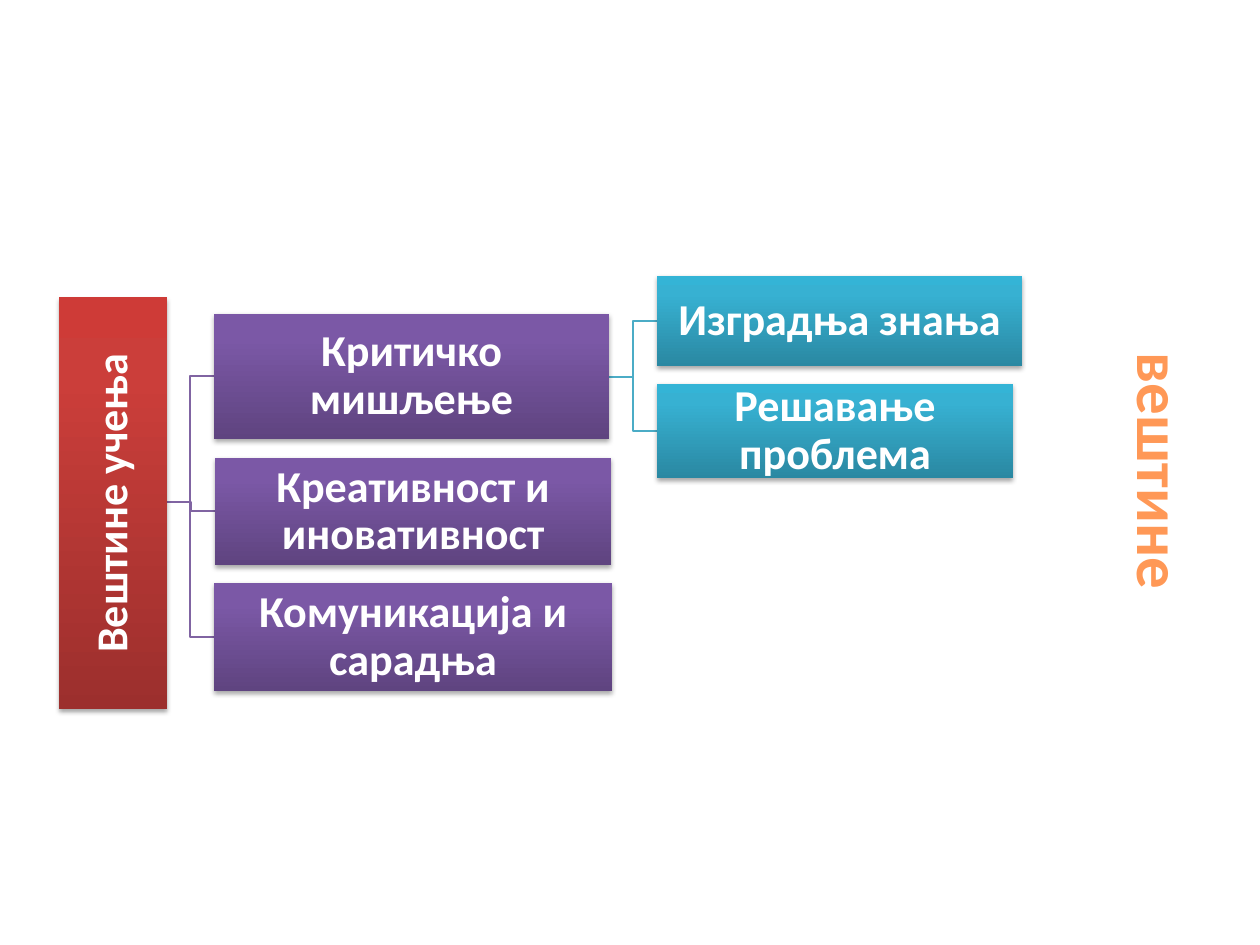
from lxml import etree
from pptx import Presentation
from pptx.dml.color import RGBColor
from pptx.enum.shapes import MSO_SHAPE
from pptx.enum.text import MSO_ANCHOR, MSO_AUTO_SIZE, PP_ALIGN
from pptx.oxml.ns import qn
from pptx.util import Emu, Pt

RECTANGLE = MSO_SHAPE.RECTANGLE
MIDDLE = MSO_ANCHOR.MIDDLE
CENTER, LEFT = PP_ALIGN.CENTER, PP_ALIGN.LEFT
FIT_SHAPE = MSO_AUTO_SIZE.SHAPE_TO_FIT_TEXT

SLIDE_WIDTH, SLIDE_HEIGHT = 1260, 945
SCALE = 10160000 / SLIDE_WIDTH

WHITE = RGBColor(0xFF, 0xFF, 0xFF)
BLACK = RGBColor(0x00, 0x00, 0x00)
ORANGE = RGBColor(0xFF, 0x98, 0x56)
PURPLE_LINE = RGBColor(0x80, 0x64, 0xA2)
TEAL_LINE = RGBColor(0x4B, 0xAC, 0xC6)
REDS = (RGBColor(0x9C, 0x2F, 0x2D), RGBColor(0xCB, 0x3E, 0x3A), RGBColor(0xCE, 0x3B, 0x37))
PURPLES = (RGBColor(0x5F, 0x44, 0x80), RGBColor(0x7B, 0x58, 0xA6), RGBColor(0x7C, 0x57, 0xA8))
TEALS = (RGBColor(0x2A, 0x88, 0xA2), RGBColor(0x37, 0xB1, 0xD2), RGBColor(0x34, 0xB4, 0xD6))
STOPS = (0, 80000, 100000)

ROOT_EDGE = (167, 502)
SKILL_EDGE = (609, 377)
SKILLS = (
    ("Критичко мишљење", (214, 314, 395, 125)),
    ("Креативност и иновативност", (215, 458, 396, 107)),
    ("Комуникација и сарадња", (214, 583, 398, 108)),
)
OUTCOMES = (
    ("Изградња знања", (657, 276, 365, 90)),
    ("Решавање проблема", (657, 384, 356, 94)),
)


def px(length):
    """Turn a length in px into EMU."""
    return Emu(round(length * SCALE))


def add_node(parent, tag, **attributes):
    """Append a DrawingML element and return it."""
    node = etree.SubElement(parent, qn(tag))
    for name, value in attributes.items():
        node.set(name, str(value))
    return node


def fill_gradient(shape, colours):
    """Fill a shape from bottom to top, whatever its rotation."""
    shape.fill.gradient()
    shape.fill.gradient_angle = 90
    gradient = shape._element.spPr.find(qn("a:gradFill"))
    gradient.set("rotWithShape", "0")
    stop_list = gradient.find(qn("a:gsLst"))
    for stop in list(stop_list):
        stop_list.remove(stop)
    for position, colour in zip(STOPS, colours):
        stop = add_node(stop_list, "a:gs", pos=position)
        add_node(stop, "a:srgbClr", val=colour)


def add_shadow(shape):
    """Give a shape a soft shadow below it."""
    shape.shadow.inherit = False
    effects = shape._element.spPr.find(qn("a:effectLst"))
    shadow = add_node(effects, "a:outerShdw", blurRad=Pt(3.1), dist=Pt(1.8),
                      dir=5400000, rotWithShape=0)
    colour = add_node(shadow, "a:srgbClr", val=BLACK)
    add_node(colour, "a:alpha", val=35000)


def write_text(frame, text, size=28, colour=WHITE, align=CENTER, spacing=None):
    """Write one bold paragraph into a text frame."""
    para = frame.paragraphs[0]
    para.alignment = align
    para.line_spacing = spacing
    span = para.add_run()
    span.text = text
    span.font.name = "Calibri"
    span.font.size = Pt(size)
    span.font.bold = True
    span.font.color.rgb = colour


def add_box(page, text, bounds, colours, rotation=0):
    """Add a labelled gradient box."""
    box = page.shapes.add_shape(RECTANGLE, *map(px, bounds))
    box.rotation = rotation
    box.line.fill.background()
    fill_gradient(box, colours)
    add_shadow(box)
    frame = box.text_frame
    frame.word_wrap = True
    frame.vertical_anchor = MIDDLE
    frame.margin_left = frame.margin_right = px(2)
    frame.margin_top = frame.margin_bottom = px(2)
    write_text(frame, text, spacing=0.9)


def add_branch(page, start, bounds, colour):
    """Draw a stepped line from a parent edge to the left side of a box."""
    start_x, start_y = start
    left, top, _, height = bounds
    middle_x, end_y = (start_x + left) // 2, top + height // 2
    builder = page.shapes.build_freeform(px(start_x), px(start_y))
    corners = ((middle_x, start_y), (middle_x, end_y), (left, end_y))
    builder.add_line_segments([(px(x), px(y)) for x, y in corners], close=False)
    branch = builder.convert_to_shape()
    branch.fill.background()
    branch.line.color.rgb = colour
    branch.line.width = Pt(0.75)
    branch.shadow.inherit = False


def add_side_label(page, text, bounds):
    """Add the large label that reads downwards."""
    label = page.shapes.add_textbox(*map(px, bounds))
    label.rotation = 90
    label.text_frame.word_wrap = False
    label.text_frame.auto_size = FIT_SHAPE
    write_text(label.text_frame, text, size=40, colour=ORANGE, align=LEFT)


def main():
    """Build the slide with the tree of learning skills."""
    deck = Presentation()
    deck.slide_width, deck.slide_height = px(SLIDE_WIDTH), px(SLIDE_HEIGHT)
    page = deck.slides.add_slide(deck.slide_layouts[6])
    levels = (
        (SKILLS, ROOT_EDGE, PURPLE_LINE, PURPLES),
        (OUTCOMES, SKILL_EDGE, TEAL_LINE, TEALS),
    )
    for boxes, edge, line_colour, _ in levels:
        for _, bounds in boxes:
            add_branch(page, edge, bounds, line_colour)
    add_box(page, "Вештине учења", (-93, 449, 412, 108), REDS, rotation=270)
    for boxes, _, _, colours in levels:
        for text, bounds in boxes:
            add_box(page, text, bounds, colours)
    add_side_label(page, "вештине", (1032, 429, 262, 87))
    deck.save("out.pptx")


if __name__ == "__main__":
    main()
